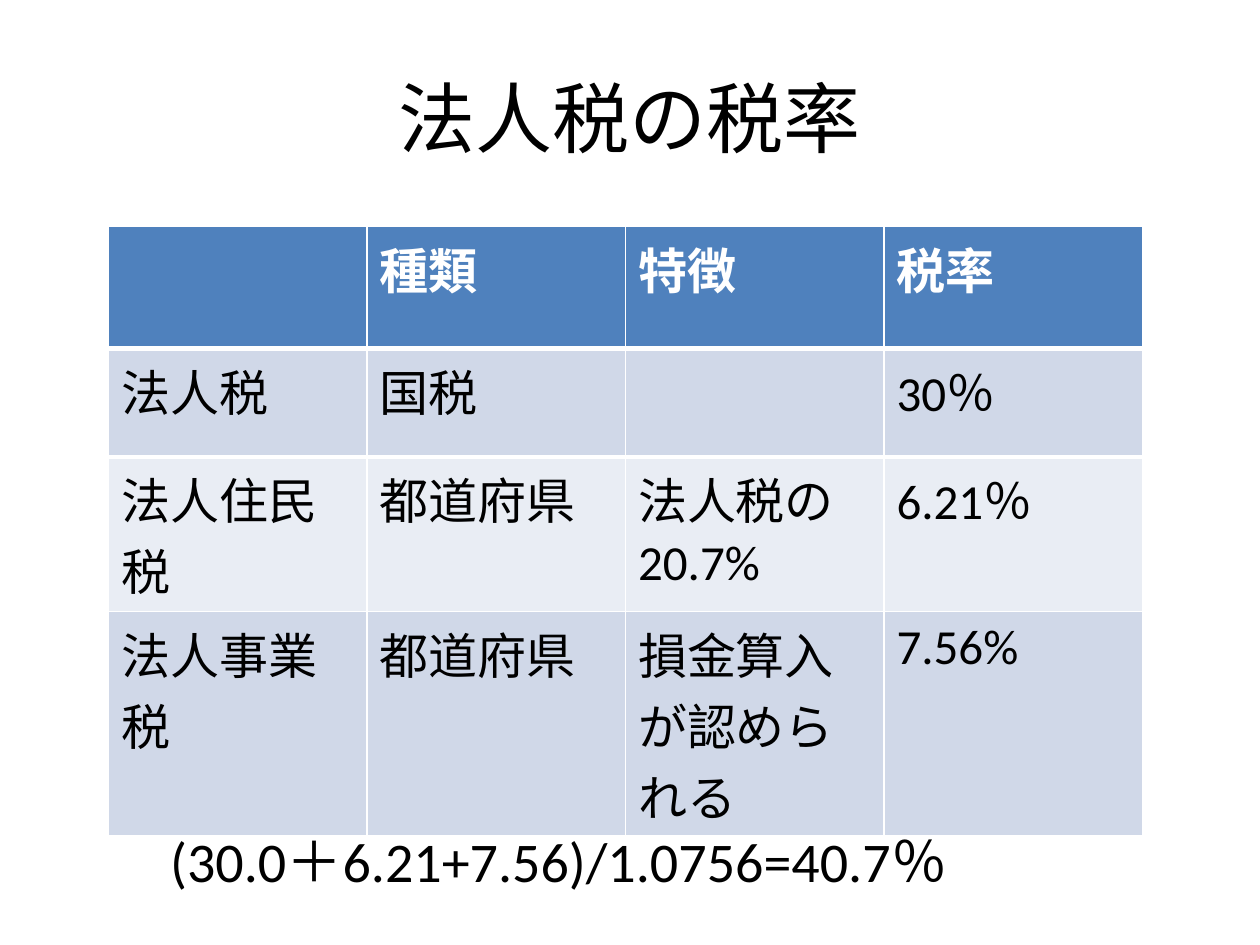
from dataclasses import dataclass

from lxml.etree import SubElement as Sub
from pptx import Presentation
from pptx.dml.color import RGBColor as Rgb
from pptx.enum.text import MSO_ANCHOR as Anchor, PP_ALIGN as Align
from pptx.oxml.ns import qn
from pptx.util import Cm, Pt


@dataclass(frozen=True)
class Theme:
    font: str = "Calibri"
    ink: str = "000000"
    light: str = "FFFFFF"
    head: str = "4F81BD"
    bands: tuple = ("D0D8E8", "E9EDF4")
    title: int = 44
    cell: int = 28
    sum: int = 32
    rule: int = 3


THEME = Theme()

RATES = [
    ("", "種類", "特徴", "税率"),
    ("法人税", "国税", "", "30％"),
    ("法人住民税", "都道府県", "法人税の20.7%", "6.21％"),
    ("法人事業税", "都道府県", "損金算入が認められる", "7.56%"),
]
HEIGHTS = (2.46, 2.18, 3.12, 4.52)


def style(frame, text, size, color, bold=False):
    frame.text = text
    para = frame.paragraphs[0]
    for font in [para.font] + [run.font for run in para.runs]:
        font.name = THEME.font
        font.size = Pt(size)
        font.bold = bold
        font.color.rgb = Rgb.from_string(color)
    return para


def add_text(slide, box, text, size, align=Align.LEFT, anchor=Anchor.TOP):
    frame = slide.shapes.add_textbox(*map(Cm, box)).text_frame
    frame.word_wrap = True
    frame.vertical_anchor = anchor
    style(frame, text, size, THEME.ink).alignment = align


def add_rule(cell, side):
    props = cell._tc.get_or_add_tcPr()
    line = Sub(props, qn(f"a:{side}"), w=str(Pt(THEME.rule)))
    Sub(Sub(line, qn("a:solidFill")), qn("a:srgbClr"), val=THEME.light)
    props.insert(0, line)


def add_rates(slide, left, top, width):
    shape = slide.shapes.add_table(
        len(RATES), len(RATES[0]), Cm(left), Cm(top), Cm(width), Cm(sum(HEIGHTS))
    )
    table = shape.table
    for i, (row, high) in enumerate(zip(RATES, HEIGHTS)):
        table.rows[i].height = Cm(high)
        head = i == 0
        fill = THEME.head if head else THEME.bands[(i - 1) % 2]
        color = THEME.light if head else THEME.ink
        for j, text in enumerate(row):
            cell = table.cell(i, j)
            cell.fill.solid()
            cell.fill.fore_color.rgb = Rgb.from_string(fill)
            style(cell.text_frame, text, THEME.cell, color, head)
            if i < 2:
                add_rule(cell, "lnB" if head else "lnT")


def main():
    deck = Presentation()
    deck.slide_width, deck.slide_height = Cm(25.4), Cm(19.05)
    slide = deck.slides.add_slide(deck.slide_layouts[6])
    add_text(slide, (1.27, 0.76, 22.86, 3.18), "法人税の税率", THEME.title,
             Align.CENTER, Anchor.MIDDLE)
    add_rates(slide, 2.19, 4.57, 20.84)
    add_text(slide, (3.18, 16.54, 19.05, 1.62),
             "(30.0＋6.21+7.56)/1.0756=40.7％", THEME.sum)
    deck.save("out.pptx")


if __name__ == "__main__":
    main()
